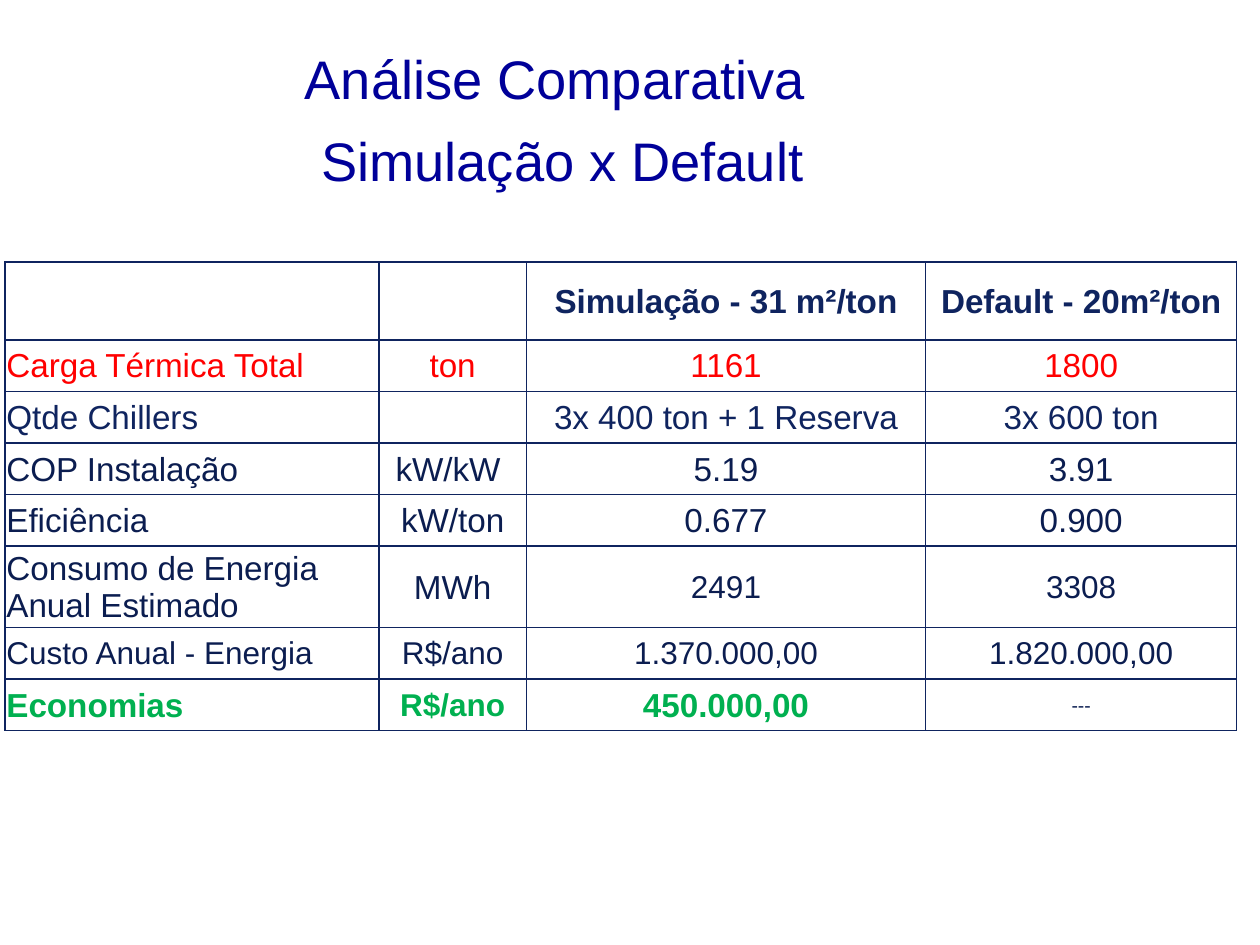
from pptx import Presentation
from pptx.dml.color import RGBColor
from pptx.enum.text import MSO_ANCHOR, PP_ALIGN
from pptx.oxml.ns import qn
from pptx.util import Cm, Pt
from lxml import etree

LEFT, CENTER = PP_ALIGN.LEFT, PP_ALIGN.CENTER
TOP, MIDDLE = MSO_ANCHOR.TOP, MSO_ANCHOR.MIDDLE

THEME = {
    "font": "Arial",
    "title": "000099", "navy": "0F245F", "ink": "0B1D50",
    "alert": "FF0000", "saving": "00B050",
    "title_size": 31, "body": 19, "small": 18, "tiny": 11,
    "border_width": 1,
}

TITLE = ["Análise Comparativa ", "Simulação x Default"]

# Cell texts, colour, bold, and a size for each column
BODY = ["body"] * 4
SMALL = ["small"] * 4
ROWS = [
    (["", "", "Simulação - 31 m²/ton", "Default - 20m²/ton"], "navy", True, BODY),
    (["Carga Térmica Total", "ton", "1161", "1800"], "alert", False, BODY),
    (["Qtde Chillers", "", "3x 400 ton + 1 Reserva", "3x 600 ton"], "navy", False, BODY),
    (["COP Instalação", "kW/kW ", "5.19", "3.91"], "ink", False, BODY),
    (["Eficiência", "kW/ton", "0.677", "0.900"], "ink", False, BODY),
    (["Consumo de Energia Anual Estimado", "MWh", "2491", "3308"], "ink", False,
     ["body", "body", "small", "small"]),
    (["Custo Anual - Energia", "R$/ano", "1.370.000,00", "1.820.000,00"], "ink", False, SMALL),
    (["Economias", "R$/ano", "450.000,00", "---"], "saving", True,
     ["body", "small", "body", "tiny"]),
]
COLUMN_WIDTHS = [7.54, 2.97, 8.05, 6.27]
HEADER_HEIGHT, ROW_HEIGHT = 1.57, 1.04
TABLE_LEFT, TABLE_TOP = 0.1, 5.28
CELL_MARGIN = 0.03


def style(para, size, color, bold=False, align=CENTER):
    para.alignment = align
    font = para.font
    for target in [font] + [span.font for span in para.runs]:
        target.name = THEME["font"]
        target.size = Pt(THEME[size])
        target.bold = bold
        target.color.rgb = RGBColor.from_string(THEME[color])


def add_borders(cell):
    """Draw a solid line on all four sides; borders must precede the fill."""
    properties = cell._tc.get_or_add_tcPr()
    for position, side in enumerate(("a:lnL", "a:lnR", "a:lnT", "a:lnB")):
        line = etree.Element(qn(side), w=str(Pt(THEME["border_width"])))
        fill = etree.SubElement(line, qn("a:solidFill"))
        etree.SubElement(fill, qn("a:srgbClr"), val=THEME["navy"])
        properties.insert(position, line)


def add_title(page):
    box = page.shapes.add_textbox(Cm(0.64), Cm(0.43), Cm(21.39), Cm(2.97))
    frame = box.text_frame
    frame.word_wrap = True
    frame.vertical_anchor = TOP
    frame.margin_top = Cm(0.23)
    frame.text = "\n".join(TITLE)
    for index, para in enumerate(frame.paragraphs):
        style(para, "title_size", "title")
        para.line_spacing = 1.2
        para.space_before = Pt(2 if index else 0)


def add_comparison(page):
    heights = [HEADER_HEIGHT] + [ROW_HEIGHT] * (len(ROWS) - 1)
    table = page.shapes.add_table(
        len(ROWS), len(COLUMN_WIDTHS), Cm(TABLE_LEFT), Cm(TABLE_TOP),
        Cm(sum(COLUMN_WIDTHS)), Cm(sum(heights))).table
    table.first_row = table.horz_banding = False
    for column, width in zip(table.columns, COLUMN_WIDTHS):
        column.width = Cm(width)
    for row, height, (texts, color, bold, sizes) in zip(table.rows, heights, ROWS):
        row.height = Cm(height)
        for index, (cell, text, size) in enumerate(zip(row.cells, texts, sizes)):
            cell.text = text
            cell.vertical_anchor = MIDDLE
            cell.margin_left = cell.margin_right = cell.margin_top = Cm(CELL_MARGIN)
            cell.margin_bottom = 0
            cell.fill.background()
            add_borders(cell)
            missing = text == "---"
            style(cell.text_frame.paragraphs[0], size, "ink" if missing else color,
                  bold and not missing, CENTER if index else LEFT)


def main():
    deck = Presentation()
    deck.slide_width, deck.slide_height = Cm(25.4), Cm(19.05)
    page = deck.slides.add_slide(deck.slide_layouts[6])
    add_title(page)
    add_comparison(page)
    deck.save("out.pptx")


if __name__ == "__main__":
    main()
